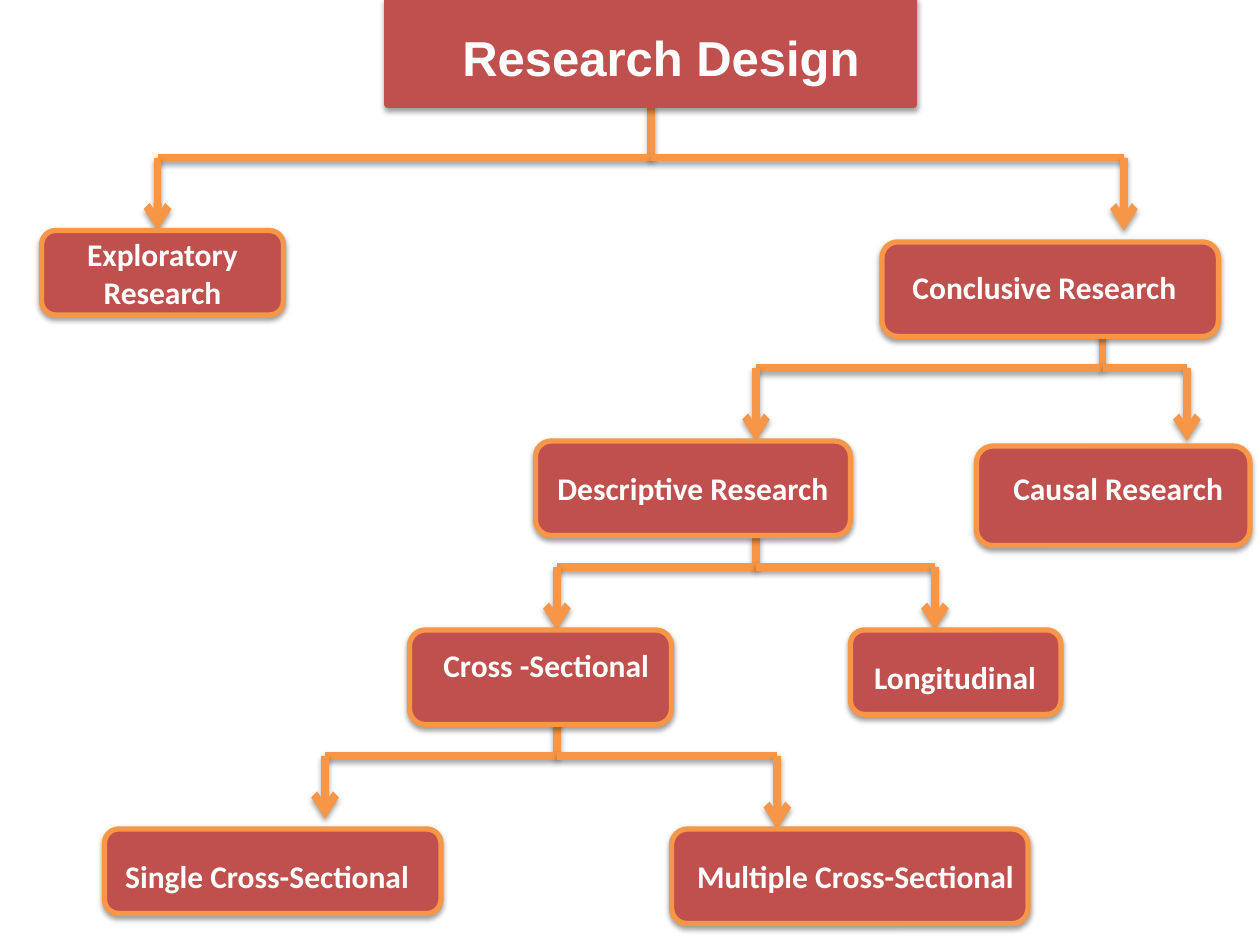
from lxml import etree
from pptx import Presentation
from pptx.dml.color import RGBColor
from pptx.enum.shapes import MSO_CONNECTOR, MSO_SHAPE
from pptx.enum.text import MSO_ANCHOR, MSO_AUTO_SIZE, PP_ALIGN
from pptx.oxml.ns import qn
from pptx.util import Inches, Pt

STRAIGHT = MSO_CONNECTOR.STRAIGHT
RECTANGLE = MSO_SHAPE.RECTANGLE
ROUNDED = MSO_SHAPE.ROUNDED_RECTANGLE
MIDDLE = MSO_ANCHOR.MIDDLE
CENTER = PP_ALIGN.CENTER
GROW = MSO_AUTO_SIZE.SHAPE_TO_FIT_TEXT

COLORS = {"fill": "C0504D", "accent": "F79646", "text": "FFFFFF", "shadow": "000000"}

# Stem x, stem top, bar height, then the (x, tip) of each arrow
BRANCHES = [
    (4.42, 5.67, 6, [(2.58, 6.5), (6.17, 6.58)]),
    (6, 4.25, 4.5, [(4.42, 5), (7.42, 5)]),
    (5.17, 0.83, 1.25, [(1.25, 1.83), (8.92, 1.83)]),
    (8.75, 2.58, 2.92, [(6, 3.5), (9.42, 3.5)]),
]

# Wording, box, then the label's offset from the box and its width
NODES = [
    ("Conclusive Research", (7, 1.92, 2.67, 0.75), (0.08, 0.16, 2.42)),
    ("Descriptive Research", (4.25, 3.5, 2.5, 0.75), (0, 0.17, 2.5)),
    ("Causal Research", (7.75, 3.54, 2.17, 0.79), (0, 0.13, 2.25)),
    ("Cross -Sectional", (3.25, 5, 2.08, 0.75), (0, 0.08, 2.17)),
    ("Longitudinal ", (6.75, 5, 1.67, 0.67), (0.08, 0.17, 1.5)),
    ("Single Cross-Sectional", (0.83, 6.58, 2.67, 0.67), (0, 0.17, 2.58)),
    ("Multiple Cross-Sectional", (5.33, 6.58, 2.83, 0.75), (0, 0.17, 2.92)),
]


def rgb(name):
    return RGBColor.from_string(COLORS[name])


def add_shadow(shape, distance, opacity):
    """Give a shape or connector a soft shadow straight below it."""
    effects = etree.SubElement(shape._element.spPr, qn("a:effectLst"))
    outer = etree.SubElement(
        effects, qn("a:outerShdw"), blurRad=str(Pt(3.1)), dist=str(Pt(distance)),
        dir="5400000", rotWithShape="0")
    color = etree.SubElement(outer, qn("a:srgbClr"), val=COLORS["shadow"])
    etree.SubElement(color, qn("a:alpha"), val=str(opacity * 1000))


def add_line(group, start, end, arrow=False):
    line = group.shapes.add_connector(STRAIGHT, *map(Inches, start + end))
    line.line.color.rgb = rgb("accent")
    line.line.width = Pt(4.5)
    if arrow:
        etree.SubElement(line.line._get_or_add_ln(), qn("a:tailEnd"), type="arrow")
    add_shadow(line, 1.8, 35)


def add_branch(page, x, top, bar, tips):
    """Draw a stem that splits into arrows along a horizontal bar."""
    group = page.shapes.add_group_shape()
    add_line(group, (x, top), (x, bar))
    for tip_x, tip_y in tips:
        add_line(group, (x, bar), (tip_x, bar))
        add_line(group, (tip_x, bar), (tip_x, tip_y), arrow=True)


def add_box(page, area, kind=ROUNDED, outline="accent", weight=3):
    box = page.shapes.add_shape(kind, *map(Inches, area))
    box.fill.solid()
    box.fill.fore_color.rgb = rgb("fill")
    box.line.color.rgb = rgb(outline)
    box.line.width = Pt(weight)
    add_shadow(box, 1.6, 38)
    return box


def write(frame, wording, size=18, font="Calibri"):
    frame.word_wrap = True
    para = frame.paragraphs[0]
    para.alignment = CENTER
    span = para.add_run()
    span.text = wording
    span.font.size = Pt(size)
    span.font.name = font
    span.font.bold = True
    span.font.color.rgb = rgb("text")


def add_label(page, area, wording, **style):
    label = page.shapes.add_textbox(*map(Inches, area))
    write(label.text_frame, wording, **style)
    label.text_frame.auto_size = GROW


def add_title(page, area):
    left, top = area[:2]
    add_box(page, area, RECTANGLE, "fill", 4.5)
    add_label(page, (left + 0.25, top + 0.17, 3.83, 0.57), "Research Design",
              size=28, font="Arial")


def add_node(page, wording, area, offset):
    dx, dy, width = offset
    add_box(page, area)
    add_label(page, (area[0] + dx, area[1] + dy, width, 0.4), wording)


def add_exploratory(page, area):
    """Draw the one box whose wording wraps inside it."""
    frame = add_box(page, area).text_frame
    frame.vertical_anchor = MIDDLE
    write(frame, "Exploratory Research")


def main():
    deck = Presentation()
    deck.slide_width, deck.slide_height = Inches(10), Inches(7.5)
    page = deck.slides.add_slide(deck.slide_layouts[6])

    # Arrows lie behind the boxes
    for branch in BRANCHES:
        add_branch(page, *branch)

    # Boxes and their labels
    add_title(page, (3.08, 0, 4.17, 0.83))
    for node in NODES:
        add_node(page, *node)
    add_exploratory(page, (0.33, 1.83, 1.92, 0.67))

    deck.save("out.pptx")


if __name__ == "__main__":
    main()
